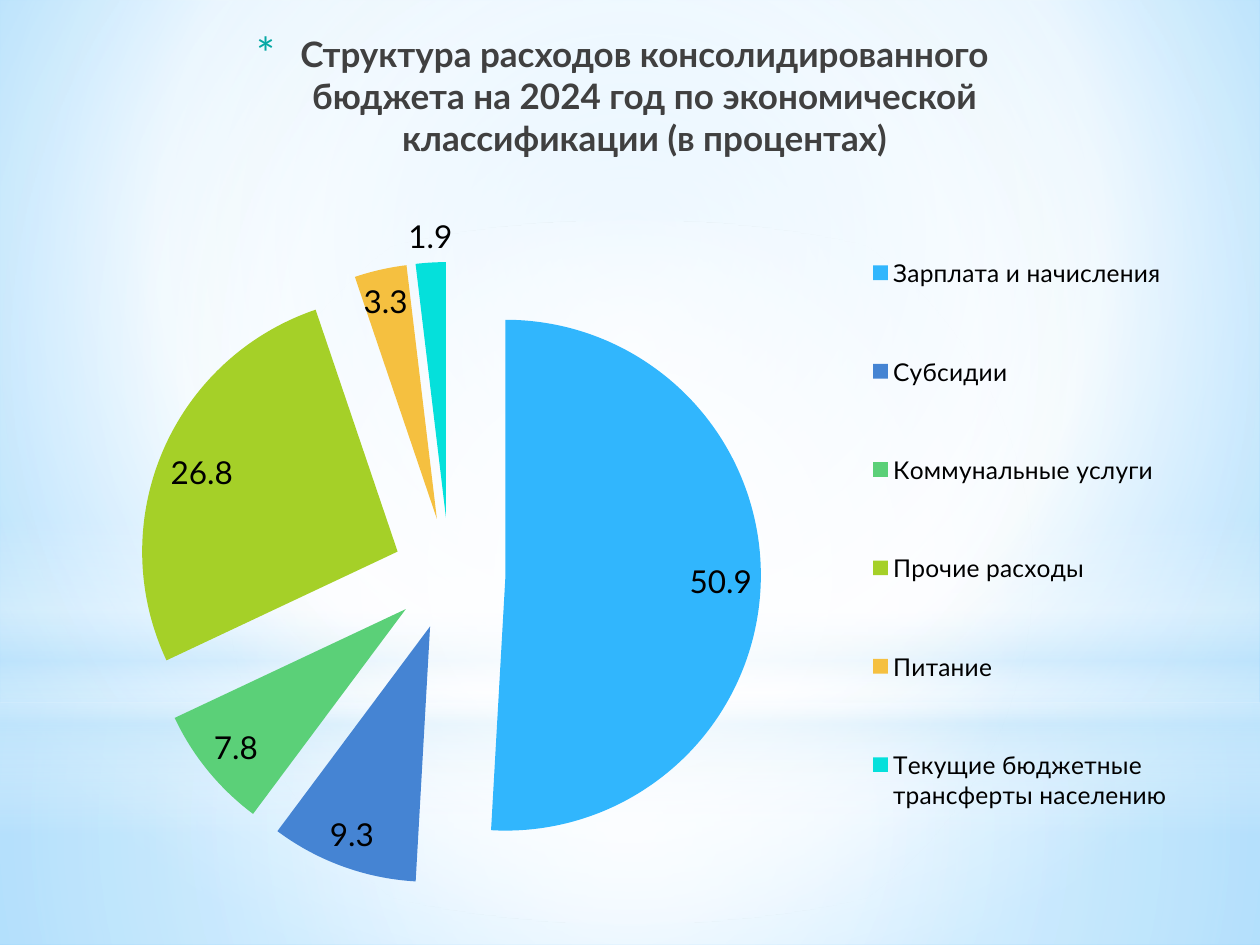
from lxml import etree
from pptx import Presentation
from pptx import util as u
from pptx.chart.data import CategoryChartData
from pptx.dml.color import RGBColor
from pptx.enum import chart as ch, shapes, text
from pptx.oxml import parse_xml
from pptx.oxml.ns import nsdecls, qn

COLORS = {
    "white": "FFFFFF", "sky": "B0E0FF", "edge": "6BC5FF", "haze": "C6E7FC",
    "title": "404040", "bullet": "04A8A4", "labels": "000000",
}
EXPENSES = [
    ("Зарплата и начисления", 50.9, "31B6FD"),
    ("Субсидии", 9.3, "4584D3"),
    ("Коммунальные услуги", 7.8, "5BD078"),
    ("Прочие расходы", 26.8, "A5D028"),
    ("Питание", 3.3, "F5C040"),
    ("Текущие бюджетные трансферты населению", 1.9, "05E0DB"),
]
CENTRE = (50, 50, 50, 50)


def rgb(name):
    return RGBColor.from_string(COLORS[name])


def set_gradient(fill, parent, stops, focus=None):
    """Stops are (position %, colour, opacity %); without a focus it runs downwards."""
    fill.gradient()
    marks = "".join(
        f'<a:gs pos="{pos * 1000}"><a:srgbClr val="{COLORS[color]}">'
        f'<a:alpha val="{alpha * 1000}"/></a:srgbClr></a:gs>'
        for pos, color, alpha in stops)
    if focus:
        sides = " ".join(f'{side}="{v * 1000}"' for side, v in zip("ltrb", focus))
        direction = f'<a:path path="circle"><a:fillToRect {sides}/></a:path>'
    else:
        direction = '<a:lin ang="5400000" scaled="0"/>'
    old = next(parent.iter(qn("a:gradFill")))
    old.getparent().replace(old, parse_xml(
        f'<a:gradFill {nsdecls("a")} rotWithShape="1">'
        f'<a:gsLst>{marks}</a:gsLst>{direction}</a:gradFill>'))


def manual_layout(x, y, w, h, inner=False):
    target = '<c:layoutTarget val="inner"/>' if inner else ""
    return parse_xml(
        f'<c:layout {nsdecls("c")}><c:manualLayout>{target}'
        '<c:xMode val="edge"/><c:yMode val="edge"/>'
        f'<c:x val="{x}"/><c:y val="{y}"/><c:w val="{w}"/><c:h val="{h}"/>'
        '</c:manualLayout></c:layout>')


class BudgetSlide:
    font = "Lato"

    def __init__(self, presentation):
        self.slide = presentation.slides.add_slide(presentation.slide_layouts[6])

    def background(self, stops, focus):
        set_gradient(self.slide.background.fill, self.slide.element.cSld, stops, focus)

    def glow(self, kind, top, height, stops, focus=None):
        """Full-width translucent gradient layer."""
        layer = self.slide.shapes.add_shape(kind, 0, u.Cm(top), u.Cm(25.4), u.Cm(height))
        layer.shadow.inherit = False
        layer.line.fill.background()
        set_gradient(layer.fill, layer.element.spPr, stops, focus)

    def title(self, wording, left, top, width, height):
        box = self.slide.shapes.add_textbox(*map(u.Cm, (left, top, width, height)))
        frame = box.text_frame
        frame.word_wrap = True
        frame.vertical_anchor = text.MSO_ANCHOR.TOP
        heading = frame.paragraphs[0]
        heading.text = wording
        heading.alignment = text.PP_ALIGN.CENTER
        heading.font.name, heading.font.size, heading.font.bold = self.font, u.Pt(20), True
        heading.font.color.rgb = rgb("title")
        props = heading._p.get_or_add_pPr()
        props.set("marL", str(u.Cm(0.89)))
        props.set("indent", str(u.Cm(-0.89)))
        bullet = [
            f'<a:buClr {nsdecls("a")}><a:srgbClr val="{COLORS["bullet"]}"/></a:buClr>',
            f'<a:buSzPct {nsdecls("a")} val="128000"/>',
            f'<a:buFont {nsdecls("a")} typeface="{self.font}"/>',
            f'<a:buChar {nsdecls("a")} char="*"/>',
        ]
        for place, part in enumerate(bullet):
            props.insert(place, parse_xml(part))

    def exploded_pie(self, entries, left, top, width, height):
        data = CategoryChartData(number_format="0.0")
        data.categories = [name for name, _, _ in entries]
        data.add_series("Расходы", [share for _, share, _ in entries])
        pie = self.slide.shapes.add_chart(
            ch.XL_CHART_TYPE.PIE, *map(u.Cm, (left, top, width, height)), data).chart
        pie.has_title = False
        pie.font.name, pie.font.size = self.font, u.Pt(18)
        pie.font.color.rgb = rgb("labels")

        plot = pie.plots[0]
        plot.vary_by_categories = True
        plot.has_data_labels = True
        labels = plot.data_labels
        labels.show_value, labels.show_percentage = True, False
        labels.number_format, labels.number_format_is_linked = "0.0", False
        labels.position = ch.XL_LABEL_POSITION.BEST_FIT

        expenses = plot.series[0]
        for index, (_, _, color) in enumerate(entries):
            slice_fill = expenses.points[index].format.fill
            slice_fill.solid()
            slice_fill.fore_color.rgb = RGBColor.from_string(color)
        explosion = etree.Element(qn("c:explosion"), val="22")
        expenses._element.find(qn("c:dPt")).addprevious(explosion)

        area = pie.element.find(".//" + qn("c:plotArea"))
        for old in area.findall(qn("c:layout")):
            area.remove(old)
        area.insert(0, manual_layout(0.01, 0.12, 0.69, 0.86, inner=True))

        pie.has_legend = True
        legend = pie.legend
        legend.position = ch.XL_LEGEND_POSITION.RIGHT
        legend.font.size = u.Pt(14)
        legend.include_in_layout = False
        for old in legend._element.findall(qn("c:layout")):
            legend._element.remove(old)
        legend._element.find(qn("c:legendPos")).addnext(
            manual_layout(0.72, 0.02, 0.27, 0.95))


def main():
    deck = Presentation()
    deck.slide_width, deck.slide_height = u.Cm(25.4), u.Cm(19.05)
    budget = BudgetSlide(deck)
    rectangle, oval = shapes.MSO_SHAPE.RECTANGLE, shapes.MSO_SHAPE.OVAL

    budget.background([(0, "sky", 100), (60, "white", 100), (100, "edge", 100)],
                      (20, 10, 20, 60))
    budget.glow(rectangle, 14.17, 4.88,
                [(0, "white", 91), (37, "white", 76), (100, "haze", 79)], CENTRE)
    budget.glow(rectangle, 0, 14.17,
                [(0, "white", 89), (48, "white", 62), (100, "haze", 79)], CENTRE)
    budget.glow(rectangle, 10.46, 6.35,
                [(0, "white", 0), (29, "white", 30), (45, "haze", 40),
                 (55, "white", 26), (65, "haze", 60), (100, "white", 0)])
    budget.glow(oval, 4.45, 14.17, [(0, "white", 100), (56, "white", 0)], CENTRE)

    budget.title("Структура расходов консолидированного бюджета на 2024 год "
                 "по экономической классификации (в процентах)",
                 3.51, 0.53, 18.08, 3.18)
    budget.exploded_pie(EXPENSES, 0.89, 3.53, 23.01, 14.61)
    deck.save("out.pptx")


if __name__ == "__main__":
    main()
